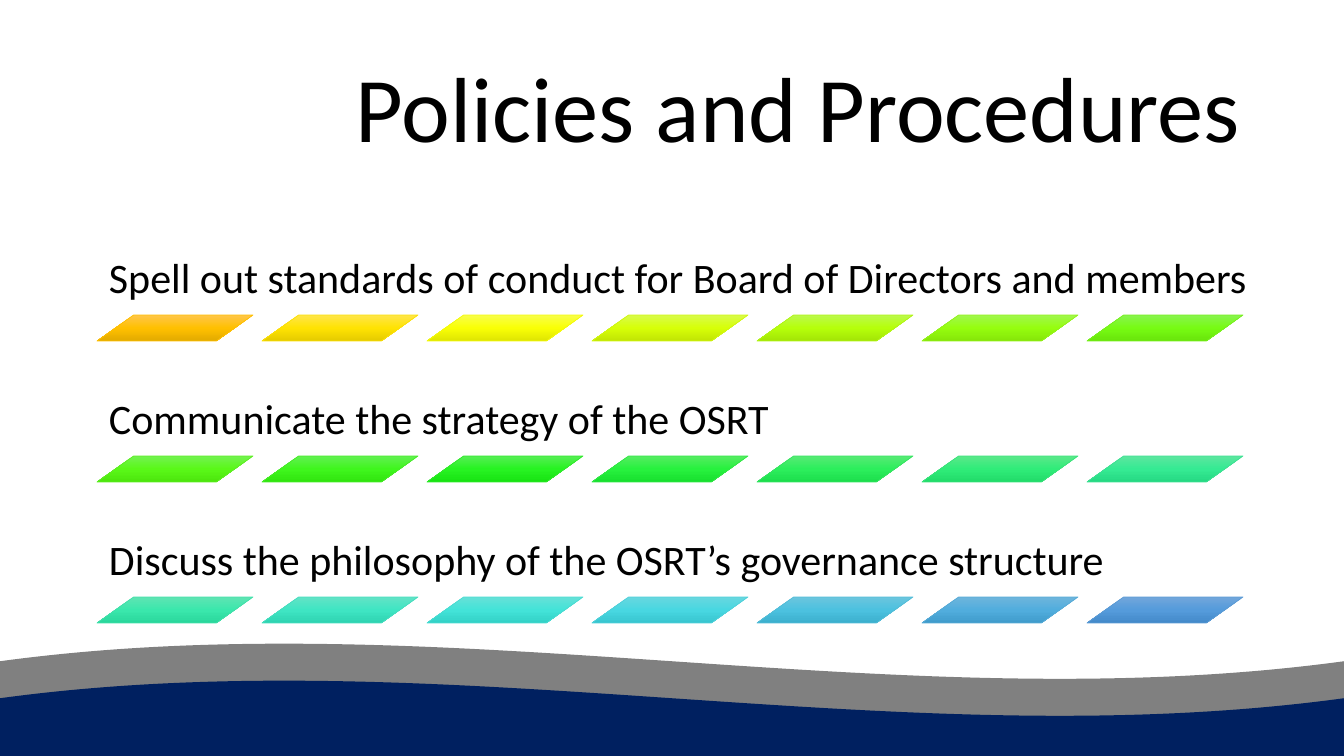
from copy import deepcopy
from dataclasses import dataclass

from pptx import Presentation
from pptx.dml.color import RGBColor
from pptx.enum.shapes import MSO_SHAPE
from pptx.enum.text import MSO_ANCHOR, MSO_AUTO_SIZE, PP_ALIGN
from pptx.oxml.ns import qn
from pptx.util import Emu, Pt

WAVE = MSO_SHAPE.WAVE
PARALLELOGRAM = MSO_SHAPE.PARALLELOGRAM
MIDDLE = MSO_ANCHOR.MIDDLE
BOTTOM = MSO_ANCHOR.BOTTOM
LEFT = PP_ALIGN.LEFT
RIGHT = PP_ALIGN.RIGHT
NO_AUTOFIT = MSO_AUTO_SIZE.NONE

SLIDE_WIDTH, SLIDE_HEIGHT = 1344, 756
EMU_PER_PX = 914400 / 100.8


@dataclass(frozen=True)
class Theme:
    font: str = "Calibri"
    text: str = "000000"
    upper_wave: str = "808080"
    lower_wave: str = "002060"
    title_size: int = 66
    policy_size: int = 30
    tile_line: float = 0.5
    line_spacing: float = 0.9
    tile_rows: tuple = (
        (
            "FFC64B FFC000 E3AB00 FFC000",
            "FFE54B FFE302 E5CB00 FCE105",
            "F8FE4B F9FF05 DFE502 F4FA0A",
            "D8FB4C D7FF07 C1E504 D2F70F",
            "BBF94D B6FF0A A3E506 B2F514",
            "A0F74E 96FE0E 85E509 94F319",
            "88F44F 77FB13 69E50B 78F01D",
        ),
        (
            "73F251 5AF818 4CE50D 5EEE22",
            "62F052 3FF61D 31E50F 46EC27",
            "56EE54 27F322 18E313 30EA2B",
            "56EC62 27F13E 18E02F 30E845",
            "58EA75 2CEE5C 1DDE4D 35E561",
            "5BE88A 30EC79 21DB69 39E37B",
            "5DE69F 35EA93 26D983 3DE193",
        ),
        (
            "60E4B3 3AE7AC 2AD79C 42E0AA",
            "63E3C6 3FE5C3 2FD4B2 46DEBF",
            "66E1D8 43E3D8 33D2C7 4ADCD2",
            "68D7DF 48D7E1 38C6D0 4FD1DA",
            "6BC5DE 4CC1DF 3CB0CE 53BDD8",
            "6EB5DC 51ADDD 409CCC 57ABD7",
            "71A6DB 559BDB 448ACA 5B9BD5",
        ),
    )


def px(length):
    return Emu(round(length * EMU_PER_PX))


def rgb(value):
    return RGBColor.from_string(value)


class SlideBuilder:
    def __init__(self, slide, theme):
        self.slide = slide
        self.theme = theme

    def set_text(self, frame, text, size, alignment, anchor):
        frame.word_wrap = True
        frame.auto_size = NO_AUTOFIT
        frame.vertical_anchor = anchor
        paragraph = frame.paragraphs[0]
        paragraph.text = text
        paragraph.alignment = alignment
        paragraph.line_spacing = self.theme.line_spacing
        paragraph.font.name = self.theme.font
        paragraph.font.size = Pt(size)
        paragraph.font.color.rgb = rgb(self.theme.text)

    def title(self, text, left, top, width, height):
        title = self.slide.shapes.title
        title.left, title.top = px(left), px(top)
        title.width, title.height = px(width), px(height)
        self.set_text(title.text_frame, text, self.theme.title_size, RIGHT, MIDDLE)

    def policy(self, text, left, top, width, height, inset):
        box = self.slide.shapes.add_textbox(px(left), px(top), px(width), px(height))
        frame = box.text_frame
        frame.margin_left = frame.margin_right = px(inset)
        frame.margin_top = frame.margin_bottom = px(inset)
        self.set_text(frame, text, self.theme.policy_size, LEFT, BOTTOM)

    def shape(self, kind, left, top, width, height):
        shape = self.slide.shapes.add_shape(kind, px(left), px(top), px(width), px(height))
        shape.shadow.inherit = False
        return shape

    def wave(self, color, top, height):
        wave = self.shape(WAVE, 0, top, SLIDE_WIDTH, height)
        wave.fill.solid()
        wave.fill.fore_color.rgb = rgb(color)
        wave.line.fill.background()

    def tile(self, colors, left, top, width, height):
        tile = self.shape(PARALLELOGRAM, left, top, width, height)
        tile.adjustments[0] = 1.41
        *gradient, outline = colors.split()
        tile.fill.gradient()
        tile.fill.gradient_angle = 270
        stop_list = tile.element.spPr.find(qn("a:gradFill")).find(qn("a:gsLst"))
        stop_list.append(deepcopy(stop_list[0]))
        for stop, color, position in zip(tile.fill.gradient_stops, gradient, (0, 0.5, 1)):
            stop.color.rgb = rgb(color)
            stop.position = position
        tile.line.color.rgb = rgb(outline)
        tile.line.width = Pt(self.theme.tile_line)


def main():
    presentation = Presentation()
    presentation.slide_width = px(SLIDE_WIDTH)
    presentation.slide_height = px(SLIDE_HEIGHT)
    theme = Theme()
    slide = presentation.slides.add_slide(presentation.slide_layouts[5])
    builder = SlideBuilder(slide, theme)

    builder.wave(theme.upper_wave, 643, 146)
    builder.wave(theme.lower_wave, 680, 146)
    builder.title("Policies and Procedures", 293, 40, 958, 146)

    policies = (
        "Spell out standards of conduct for Board of Directors and members",
        "Communicate the strategy of the OSRT",
        "Discuss the philosophy of the OSRT’s governance structure",
    )
    left, first_top, row_pitch, tile_pitch = 97, 209, 141, 165
    policy_height = 106
    for row, (policy, tiles) in enumerate(zip(policies, theme.tile_rows)):
        top = first_top + row * row_pitch
        builder.policy(policy, left, top, 1169, policy_height, 12)
        for column, colors in enumerate(tiles):
            builder.tile(colors, left + column * tile_pitch, top + policy_height, 156, 26)

    presentation.save("out.pptx")


if __name__ == "__main__":
    main()
